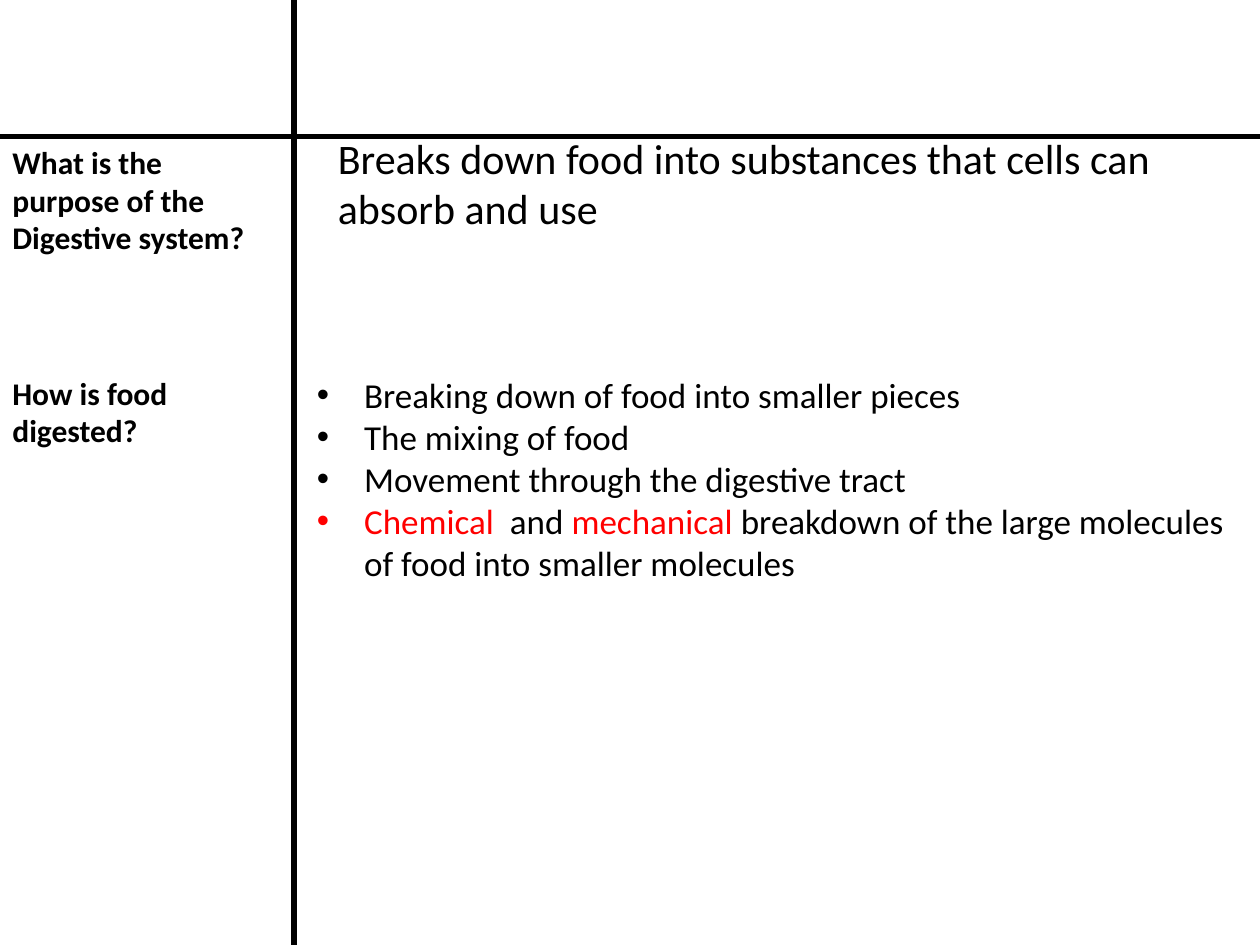
import pptx
import pptx.dml.color
import pptx.enum.shapes
import pptx.enum.text
import pptx.oxml.xmlchemy
import pptx.util
from dataclasses import dataclass

Pt = pptx.util.Pt
RGB = pptx.dml.color.RGBColor
OxmlElement = pptx.oxml.xmlchemy.OxmlElement


@dataclass(frozen=True)
class Theme:
    """Colours, type sizes and line weight of the notes page."""
    font: str = "Calibri"
    ink: RGB = RGB(0, 0, 0)
    accent: RGB = RGB(255, 0, 0)
    question: float = 18
    answer: float = 24
    bullet: float = 20
    rule: float = 3
    indent: float = 27


THEME = Theme()
QUESTION = dict(size=Pt(THEME.question), bold=True)
ANSWER = dict(size=Pt(THEME.answer))
BULLET = dict(size=Pt(THEME.bullet))


def add_rule(s, x1, y1, x2, y2):
    """Draw one straight rule without a shadow."""
    line = s.shapes.add_connector(
        pptx.enum.shapes.MSO_CONNECTOR.STRAIGHT, Pt(x1), Pt(y1), Pt(x2), Pt(y2))
    line.line.color.rgb = THEME.ink
    line.line.width = Pt(THEME.rule)
    line._element.spPr.append(OxmlElement("a:effectLst"))


def add_frame(s, box, column, header):
    """Divide the page into a header row and a question column."""
    x, y, w, h = box
    add_rule(s, x + column, y, x + column, y + h)
    add_rule(s, x, y + header, x + w, y + header)


def add_bullet(p):
    """Give a paragraph a hanging round bullet."""
    p.level = 1
    pPr = p._p.get_or_add_pPr()
    pPr.set("marL", str(Pt(THEME.indent)))
    pPr.set("indent", str(-Pt(THEME.indent)))
    for tag, name, value in (("a:buFont", "typeface", "Arial"), ("a:buChar", "char", "•")):
        mark = OxmlElement(tag)
        mark.set(name, value)
        pPr.append(mark)


def add_text(s, box, paragraphs, style, bulleted=False):
    """Fill a box with paragraphs made of (text, colour) runs."""
    tf = s.shapes.add_textbox(*map(Pt, box)).text_frame
    tf.word_wrap = True
    tf.auto_size = pptx.enum.text.MSO_AUTO_SIZE.SHAPE_TO_FIT_TEXT
    for i, runs in enumerate(paragraphs):
        p = tf.add_paragraph() if i else tf.paragraphs[0]
        if bulleted:
            add_bullet(p)
        for text, color in runs:
            r = p.add_run()
            r.text = text
            for name, value in dict(style, name=THEME.font).items():
                setattr(r.font, name, value)
            r.font.color.rgb = color


def add_questions(s, box, questions):
    """Place each question in the left column at its own offset and height."""
    x, y, w, _ = box
    for offset, height, text in questions:
        add_text(s, (x, y + offset, w, height), [[(text, THEME.ink)]], QUESTION)


def main():
    """Build the two-column notes slide."""
    prs = pptx.Presentation()
    prs.slide_width, prs.slide_height = Pt(720), Pt(540)
    s = prs.slides.add_slide(prs.slide_layouts[6])
    ink, accent = THEME.ink, THEME.accent
    add_frame(s, (0, 0, 720, 540), column=168, header=78)
    add_questions(s, (0, 78, 162, 462), [
        (0, 72.7, "What is the purpose of the Digestive system?"),
        (132, 51, "How is food digested?"),
    ])
    add_text(s, (186, 72, 534, 65.4), [
        [("Breaks down food into substances that cells can absorb and use", ink)],
    ], ANSWER)
    add_text(s, (174, 210, 534, 152.6), [
        [("Breaking down of food into smaller pieces", ink)],
        [("The mixing of food", ink)],
        [("Movement through the digestive tract", ink)],
        [("Chemical", accent), ("  and ", ink), ("mechanical", accent),
         (" breakdown of the large molecules of food into smaller molecules", ink)],
    ], BULLET, bulleted=True)
    prs.save("out.pptx")


if __name__ == "__main__":
    main()
